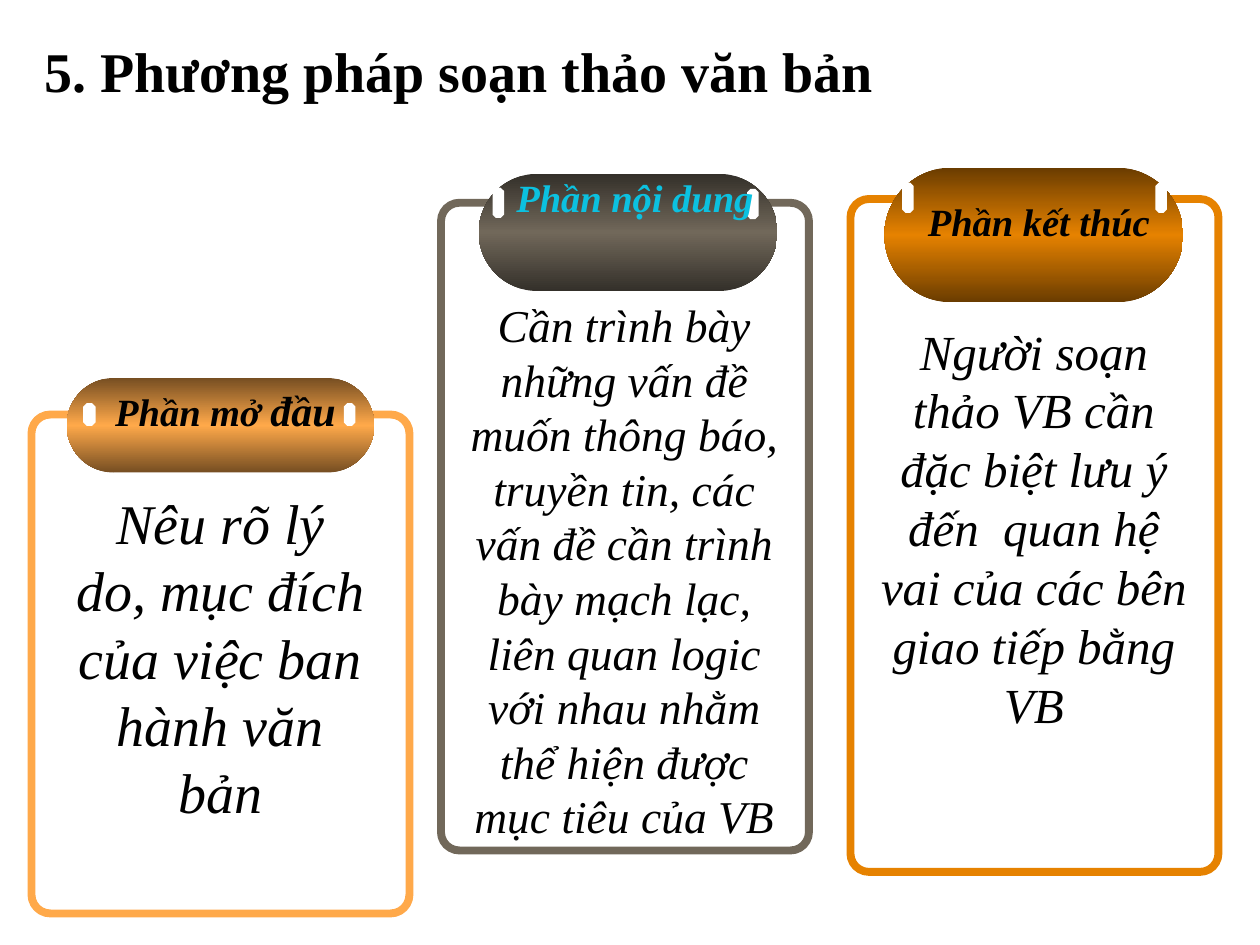
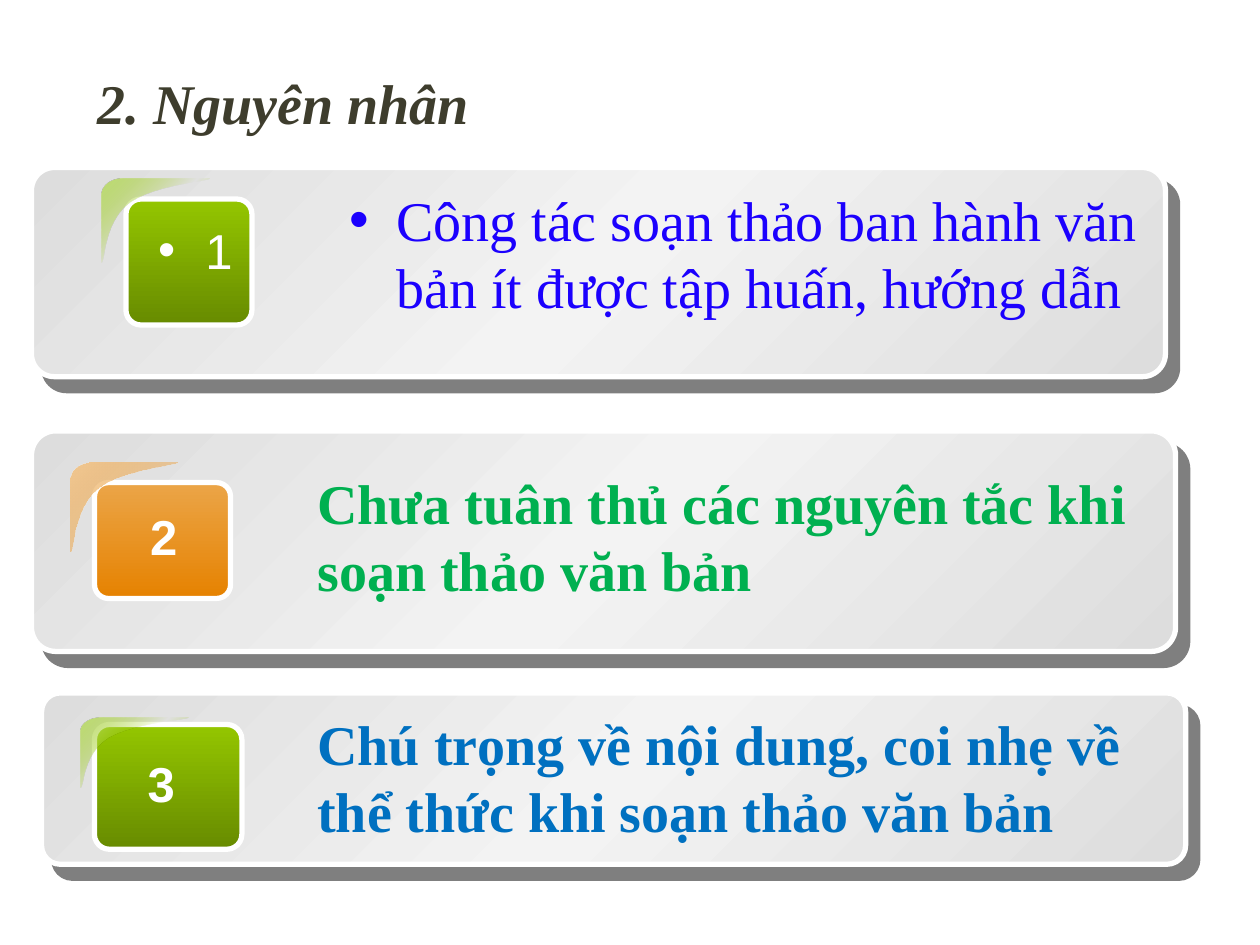
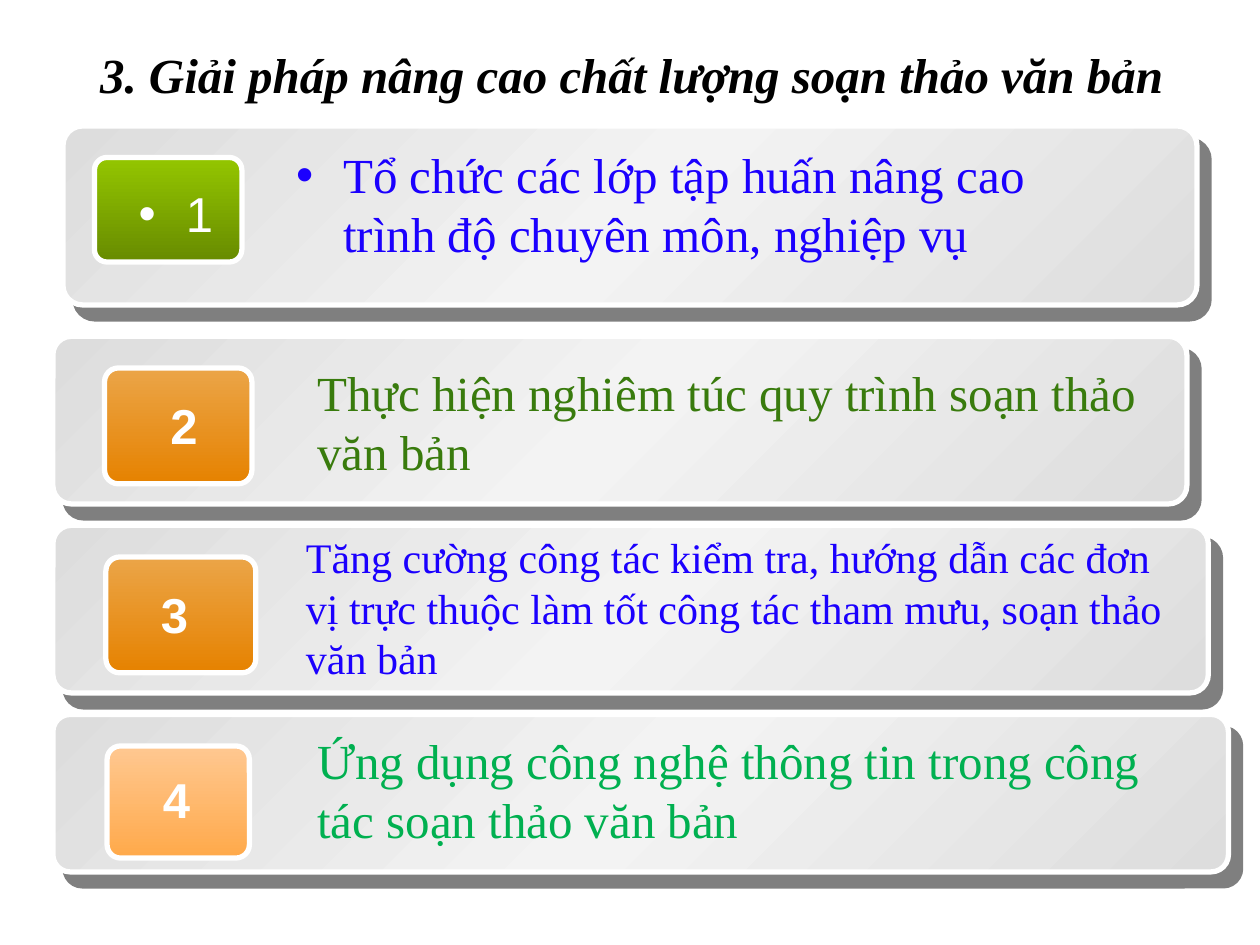
from dataclasses import dataclass

from lxml import etree
from pptx import Presentation
from pptx.dml.color import RGBColor
from pptx.enum.shapes import MSO_SHAPE
from pptx.enum.text import MSO_ANCHOR, MSO_AUTO_SIZE, PP_ALIGN
from pptx.oxml.ns import qn
from pptx.util import Inches, Pt

ROUND, OCTA = MSO_SHAPE.ROUNDED_RECTANGLE, MSO_SHAPE.OCTAGON
LEFT, MID, RIGHT = PP_ALIGN.LEFT, PP_ALIGN.CENTER, PP_ALIGN.RIGHT
TOP, CENTRE = MSO_ANCHOR.TOP, MSO_ANCHOR.MIDDLE
FIXED = MSO_AUTO_SIZE.NONE
SERIF, SANS = "Times New Roman", "Arial"

HUES = {
    "black": "000000", "white": "FFFFFF", "olive": "3E3D2D",
    "peach": "FFA94A", "rust": "764E22",
    "taupe": "71685A", "umber": "34302A",
    "orange": "E68200", "brown": "6A3C00",
    "cyan": "0CC1E0", "blue": "1B00FE", "green": "00B050",
    "azure": "0070C0", "leaf": "397B0D",
    "edge": "DDDDDD", "core": "F3F3F3",
    "lime": "94C600", "moss": "678B00", "mint": "BEDD75",
    "amber": "EBA548", "cream": "F2C891", "sand": "FFC891",
}

Box = tuple[float, float, float, float]
Stop = tuple[int, str, int]

CARD: list[Stop] = [(0, "edge", 100), (50, "core", 100), (100, "edge", 100)]
TAGS: dict[str, list[Stop]] = {
    "lime": [(0, "lime", 100), (100, "moss", 100)],
    "orange": [(0, "amber", 100), (100, "orange", 100)],
    "peach": [(0, "sand", 100), (100, "peach", 100)],
}
GLOWS: dict[str, list[Stop]] = {
    "lime": [(0, "mint", 100), (50, "lime", 0), (100, "mint", 100)],
    "orange": [(0, "cream", 100), (100, "orange", 0)],
}
CURVES = [
    ((0.2, 0), (0.08, 0), (0, 0.09), (0, 0.2)),
    ((0, 0.98), (0.04, 1), (0.01, 0.52), (0.26, 0.28)),
    ((0.26, 0.28), (0.52, 0.06), (1, 0.04), (0.98, 0)),
]


@dataclass
class Look:
    hue: str = "black"
    bold: bool = False
    slant: bool = False
    face: str = SERIF
    align: PP_ALIGN = LEFT


@dataclass
class Pane:
    hue: str
    dark: str
    frame: Box
    cap: Box
    pins: tuple[Box, Box]
    head: tuple[tuple[str, int], ...]
    spot: Box
    look: Look
    text: str
    size: int
    area: Box
    wrap: bool = True


@dataclass
class Item:
    text: str
    look: Look
    size: int
    card: Box
    tag: Box
    hue: str
    num: Box
    area: Box
    glow: Box | None = None


def rgb(hue: str) -> RGBColor:
    return RGBColor.from_string(HUES[hue])


def add(parent, name: str, **attrs):
    return etree.SubElement(parent, qn(name), attrs)


def shade(shape, stops: list[Stop], angle: int) -> None:
    shape.fill.gradient()
    shape.fill.gradient_angle = 360 - angle
    group = shape._element.spPr.find(qn("a:gradFill")).find(qn("a:gsLst"))
    for old in list(group):
        group.remove(old)
    for pos, hue, alpha in stops:
        color = add(add(group, "a:gs", pos=str(pos * 1000)), "a:srgbClr", val=HUES[hue])
        if alpha < 100:
            add(color, "a:alpha", val=str(alpha * 1000))


def shape(slide, kind, box: Box, adjust: float, line: str = "", width: float = 0):
    form = slide.shapes.add_shape(kind, *map(Inches, box))
    form.adjustments[0] = adjust
    form.shadow.inherit = False
    if line:
        form.line.color.rgb = rgb(line)
        form.line.width = Pt(width)
    else:
        form.line.fill.background()
    return form


def cast(form) -> None:
    effects = form._element.spPr.find(qn("a:effectLst"))
    drop = add(effects, "a:outerShdw", dist=str(Pt(10.6)), dir=str(49 * 60000),
               algn="ctr", rotWithShape="0")
    add(add(drop, "a:srgbClr", val=HUES["black"]), "a:alpha", val="50000")


def sweep(slide, box: Box, stops: list[Stop]) -> None:
    left, top, wide, high = box
    dots = []
    for a, b, c, d in CURVES:
        for step in range(13):
            t = step / 12
            x, y = ((1 - t) ** 3 * p + 3 * t * (1 - t) ** 2 * q
                    + 3 * t * t * (1 - t) * r + t ** 3 * s
                    for p, q, r, s in zip(a, b, c, d))
            dots.append((Inches(left + x * wide), Inches(top + y * high)))
    pen = slide.shapes.build_freeform(*dots[0])
    pen.add_line_segments(dots[1:], close=True)
    form = pen.convert_to_shape()
    form.shadow.inherit = False
    form.line.fill.background()
    shade(form, stops, 45)


def write(form, look: Look, *parts: tuple[str, int], wrap: bool = True, anchor=TOP) -> None:
    frame = form.text_frame
    frame.word_wrap = wrap
    frame.auto_size = FIXED
    frame.vertical_anchor = anchor
    para = frame.paragraphs[0]
    para.alignment = look.align
    para.space_before = Pt(0)
    for text, size in parts:
        run = para.add_run()
        run.text = text
        font = run.font
        font.name, font.size = look.face, Pt(size)
        font.bold, font.italic = look.bold, look.slant
        font.color.rgb = rgb(look.hue)


def place(form, box: Box) -> None:
    form.left, form.top, form.width, form.height = map(Inches, box)


def label(slide, box: Box, look: Look, *parts: tuple[str, int], wrap: bool = True):
    form = slide.shapes.add_textbox(*map(Inches, box))
    write(form, look, *parts, wrap=wrap)
    return form


def start(deck, layout: int, text: str, size: int, box: Box, look: Look):
    slide = deck.slides.add_slide(deck.slide_layouts[layout])
    title = slide.shapes.title
    place(title, box)
    write(title, look, (text, size), anchor=CENTRE)
    return slide


def draw_pane(slide, pane: Pane) -> None:
    shape(slide, ROUND, pane.frame, 0.05, pane.hue, 4.5).fill.background()
    cap = shape(slide, ROUND, pane.cap, 0.5)
    shade(cap, [(0, pane.dark, 100), (50, pane.hue, 100), (100, pane.dark, 100)], 90)
    for box in pane.pins:
        pin = shape(slide, OCTA, box, 0.29)
        pin.fill.solid()
        pin.fill.fore_color.rgb = rgb("white")
    label(slide, pane.spot, pane.look, *pane.head, wrap=pane.wrap)
    label(slide, pane.area, Look(slant=True, align=MID), (pane.text, pane.size))


def draw_item(slide, rank: int, item: Item) -> None:
    first = rank == 1
    card = shape(slide, ROUND, item.card, 0.11, "white", 3)
    shade(card, CARD, 45)
    cast(card)
    tag = shape(slide, ROUND, item.tag, 0.12, "white", 3)
    shade(tag, TAGS[item.hue], 90)
    if item.glow:
        sweep(slide, item.glow, GLOWS[item.hue])
    look = Look("white", not first, face=SANS, align=MID)
    num = label(slide, item.num, look, (str(rank), 28), wrap=item.num[2] > 0.9)
    if first:
        props = num.text_frame.paragraphs[0]._p.get_or_add_pPr()
        props.set("marL", str(Inches(0.375)))
        props.set("indent", str(Inches(-0.375)))
        add(props, "a:buFont", typeface=SANS)
        add(props, "a:buChar", char="•")
        body = slide.placeholders[1]
        slide.shapes._spTree.append(body._element)
        place(body, item.area)
        write(body, item.look, (item.text, item.size))
    else:
        label(slide, item.area, item.look, (item.text, item.size))


CAUSES = [
    Item("Công tác soạn thảo ban hành văn bản ít được tập huấn, hướng dẫn",
         Look("blue"), 32, (0.25, 1.33, 9, 1.66), (1, 1.58, 1, 1), "lime",
         (1.24, 1.7, 0.62, 0.7), (2.67, 1.42, 6.61, 1.18), (0.81, 1.42, 0.87, 0.68)),
    Item("Chưa tuân thủ các nguyên tắc khi soạn thảo văn bản",
         Look("green", True), 32, (0.25, 3.42, 9.08, 1.75), (0.75, 3.83, 1.08, 0.92),
         "orange", (0.99, 3.97, 0.62, 0.73), (2.42, 3.67, 6.68, 1.18),
         (0.56, 3.67, 0.87, 0.72)),
    Item("Chú trọng về nội dung, coi nhẹ về thể thức khi soạn thảo văn bản",
         Look("azure", True), 32, (0.33, 5.5, 9.08, 1.36), (0.75, 5.75, 1.17, 0.99),
         "lime", (1.08, 5.93, 0.4, 0.57), (2.42, 5.58, 6.68, 1.18),
         (0.64, 5.7, 0.87, 0.56)),
]

STEPS = [
    Item("Tổ chức các lớp tập huấn nâng cao trình độ chuyên môn, nghiệp vụ",
         Look("blue"), 28, (0.5, 1, 9, 1.42), (0.75, 1.25, 1.17, 0.83), "lime",
         (0.92, 1.41, 0.95, 0.71), (2.25, 1.1, 6.61, 1.04)),
    Item("Thực hiện nghiêm túc quy trình soạn thảo văn bản",
         Look("leaf"), 28, (0.42, 2.67, 9, 1.33), (0.83, 2.92, 1.17, 0.92), "orange",
         (1.15, 3.09, 0.62, 0.56), (2.42, 2.83, 6.78, 1.04)),
    Item("Tăng cường công tác kiểm tra, hướng dẫn các đơn vị trực thuộc làm tốt "
         "công tác tham mưu, soạn thảo văn bản",
         Look("blue"), 24, (0.42, 4.17, 9.17, 1.33), (0.84, 4.42, 1.19, 0.92), "orange",
         (1.17, 4.59, 0.43, 0.57), (2.33, 4.17, 7.03, 1.31)),
    Item("Ứng dụng công nghệ thông tin trong công tác soạn thảo văn bản",
         Look("green"), 28, (0.42, 5.67, 9.33, 1.25), (0.85, 5.92, 1.13, 0.89), "peach",
         (1.18, 6.06, 0.44, 0.57), (2.42, 5.75, 7.11, 1.04)),
]

PANES = [
    Pane("peach", "rust", (0.25, 3.29, 3, 3.96), (0.53, 3, 2.44, 0.75),
         ((0.66, 3.2, 0.1, 0.18), (2.73, 3.2, 0.09, 0.18)),
         (("Phần mở ", 22), ("đầu", 24)), (0.79, 3, 2, 0.5),
         Look(bold=True, slant=True, align=MID),
         "Nêu rõ lý do, mục đích của việc ban hành văn bản", 32, (0.5, 3.83, 2.5, 2.79)),
    Pane("taupe", "umber", (3.5, 1.61, 2.92, 5.14), (3.8, 1.38, 2.37, 0.93),
         ((3.91, 1.49, 0.09, 0.24), (5.93, 1.5, 0.09, 0.24)),
         (("Phần nội dung", 22),), (4, 1.33, 2.16, 0.61),
         Look("cyan", True, True),
         "Cần trình bày những vấn đề muốn thông báo, truyền tin, các vấn đề cần "
         "trình bày mạch lạc, liên quan logic với nhau nhằm thể hiện được mục tiêu của VB",
         26, (3.63, 2.31, 2.65, 4.48)),
    Pane("orange", "brown", (6.75, 1.58, 2.92, 5.34), (7.02, 1.33, 2.37, 1.07),
         ((7.16, 1.45, 0.09, 0.24), (9.17, 1.45, 0.09, 0.24)),
         (("Phần kết thúc", 22),), (7.25, 1.52, 1.99, 0.62),
         Look(bold=True, slant=True, align=MID),
         "Người soạn thảo VB cần đặc biệt lưu ý đến  quan hệ vai của các bên "
         "giao tiếp bằng VB", 28, (6.88, 2.5, 2.65, 3.4), False),
]


def main() -> None:
    deck = Presentation()
    deck.slide_width, deck.slide_height = Inches(10), Inches(7.5)

    slide = start(deck, 5, "5. Phương pháp soạn thảo văn bản", 32,
                  (0.25, 0.31, 6.86, 0.5), Look(bold=True))
    for pane in PANES:
        draw_pane(slide, pane)

    slide = start(deck, 1, "2. Nguyên nhân", 32,
                  (0.67, 0.5, 4.08, 0.62), Look("olive", True, True))
    for rank, item in enumerate(CAUSES, 1):
        draw_item(slide, rank, item)

    slide = start(deck, 1, "3. Giải pháp nâng cao chất lượng soạn thảo văn bản", 28,
                  (0.5, 0.17, 8.83, 0.83), Look(bold=True, slant=True, align=RIGHT))
    for rank, item in enumerate(STEPS, 1):
        draw_item(slide, rank, item)

    deck.save("out.pptx")


if __name__ == "__main__":
    main()
